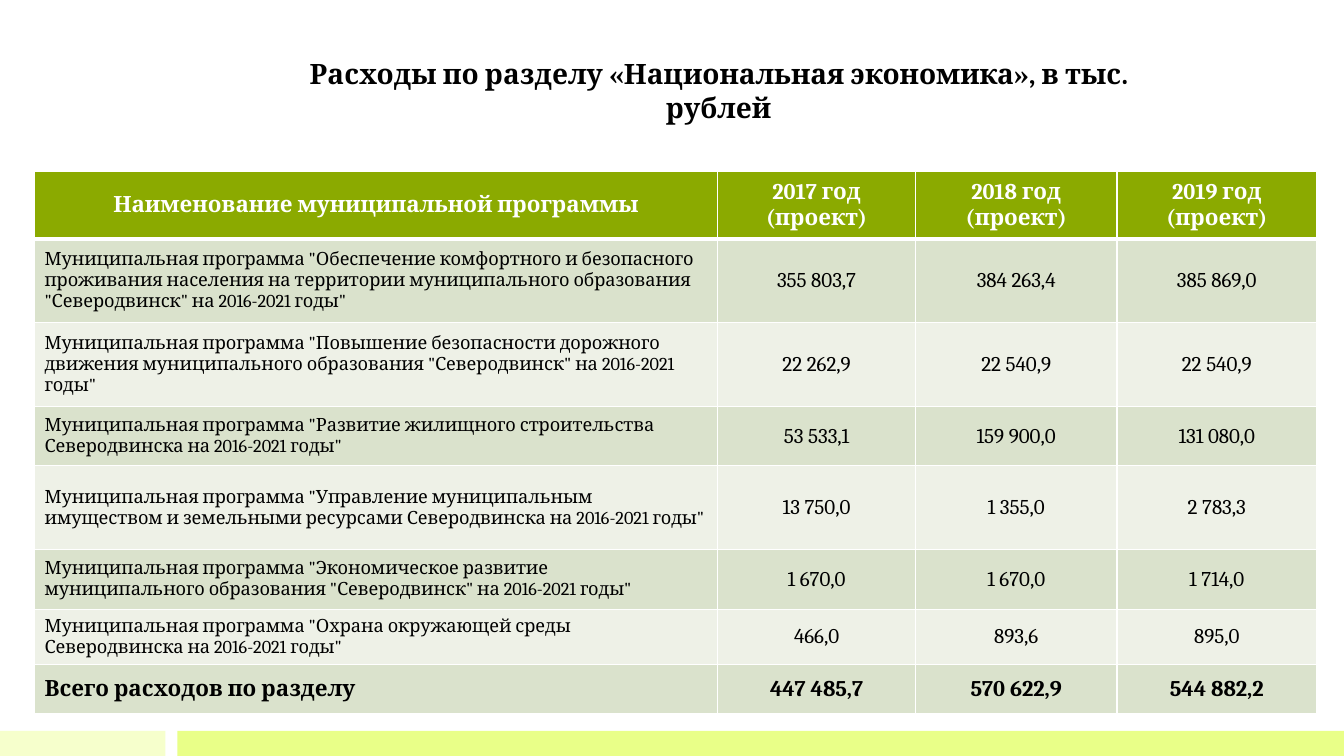
from lxml import etree
from pptx import Presentation
from pptx.dml.color import RGBColor
from pptx.enum.shapes import MSO_SHAPE
from pptx.enum.text import MSO_ANCHOR as ANCHOR, PP_ALIGN as ALIGN
from pptx.oxml.ns import qn
from pptx.util import Cm, Pt

WHITE = RGBColor(0xFF, 0xFF, 0xFF)
BLACK = RGBColor(0, 0, 0)
GREEN = RGBColor(0x8B, 0xAA, 0x00)
BAND_DARK = RGBColor(0xDA, 0xE2, 0xCC)
BAND_LIGHT = RGBColor(0xEE, 0xF1, 0xE7)
LIME = RGBColor(0xE9, 0xFF, 0x88)
PALE_LIME = RGBColor(0xF6, 0xFF, 0xCC)
FONT = "Cambria"
WIDTH, HEIGHT = 33.87, 19.05

TITLE = "Расходы по разделу «Национальная экономика», в тыс. рублей"
HEADER = ("Наименование муниципальной программы",
          "2017 год (проект)", "2018 год (проект)", "2019 год (проект)")
PROGRAMS = [
    ('Муниципальная программа "Обеспечение комфортного и безопасного проживания населения '
     'на территории муниципального образования "Северодвинск" на 2016-2021 годы"',
     "355 803,7", "384 263,4", "385 869,0"),
    ('Муниципальная программа "Повышение безопасности дорожного движения муниципального '
     'образования "Северодвинск" на 2016-2021 годы"',
     "22 262,9", "22 540,9", "22 540,9"),
    ('Муниципальная программа "Развитие жилищного строительства Северодвинска '
     'на 2016-2021 годы"',
     "53 533,1", "159 900,0", "131 080,0"),
    ('Муниципальная программа "Управление муниципальным имуществом и земельными ресурсами '
     'Северодвинска на 2016-2021 годы"',
     "13 750,0", "1 355,0", "2 783,3"),
    ('Муниципальная программа "Экономическое развитие муниципального образования '
     '"Северодвинск" на 2016-2021 годы"',
     "1 670,0", "1 670,0", "1 714,0"),
    ('Муниципальная программа "Охрана окружающей среды Северодвинска на 2016-2021 годы"',
     "466,0", "893,6", "895,0"),
]
TOTAL = ("Всего расходов по разделу", "447 485,7", "570 622,9", "544 882,2")
COL_WIDTHS = (17.22, 4.98, 5.08, 5.03)
ROW_HEIGHTS = (1.7, 2.11, 2.11, 1.5, 2.11, 1.5, 1.4, 1.22)


def write(tf, text, size, color, bold, align):
    tf.word_wrap = True
    p = tf.paragraphs[0]
    p.alignment = align
    r = p.add_run()
    r.text = text
    r.font.name = FONT
    r.font.size = Pt(size)
    r.font.bold = bold
    r.font.color.rgb = color


def set_borders(cell, bottom):
    """Draw white cell borders, 1 pt except for the bottom one."""
    tcPr = cell._tc.get_or_add_tcPr()
    for i, (side, width) in enumerate((("L", 1), ("R", 1), ("T", 1), ("B", bottom))):
        ln = etree.Element(qn(f"a:ln{side}"), w=str(Pt(width)))
        fill = etree.SubElement(ln, qn("a:solidFill"))
        etree.SubElement(fill, qn("a:srgbClr"), val=str(WHITE))
        tcPr.insert(i, ln)


def add_title(slide, left, top, width, height):
    s = slide.shapes.title
    s.left, s.top, s.width, s.height = Cm(left), Cm(top), Cm(width), Cm(height)
    s.text_frame.vertical_anchor = ANCHOR.MIDDLE
    write(s.text_frame, TITLE, 20, BLACK, True, ALIGN.CENTER)


def add_footer_bars(slide, left, top, width, height):
    short, gap = 4.17, 0.3
    long_left = left + short + gap
    for x, w, color in ((left, short, PALE_LIME),
                        (long_left, left + width - long_left, LIME)):
        s = slide.shapes.add_shape(MSO_SHAPE.RECTANGLE, Cm(x), Cm(top), Cm(w), Cm(height))
        s.shadow.inherit = False
        s.fill.solid()
        s.fill.fore_color.rgb = color
        s.line.fill.background()


def add_expense_table(slide, left, top):
    rows = [HEADER, *PROGRAMS, TOTAL]
    table = slide.shapes.add_table(
        len(rows), len(HEADER), Cm(left), Cm(top),
        Cm(sum(COL_WIDTHS)), Cm(sum(ROW_HEIGHTS))).table
    for column, width in zip(table.columns, COL_WIDTHS):
        column.width = Cm(width)
    for i, (values, height) in enumerate(zip(rows, ROW_HEIGHTS)):
        table.rows[i].height = Cm(height)
        is_header = i == 0
        strong = is_header or values is TOTAL
        band = GREEN if is_header else BAND_DARK if i % 2 else BAND_LIGHT
        for j, text in enumerate(values):
            cell = table.cell(i, j)
            cell.vertical_anchor = ANCHOR.MIDDLE
            cell.fill.solid()
            cell.fill.fore_color.rgb = band
            set_borders(cell, 3 if is_header else 1)
            size = 16 if strong else 15 if j else 13
            align = ALIGN.CENTER if is_header or j else ALIGN.LEFT
            write(cell.text_frame, text, size, WHITE if is_header else BLACK, strong, align)


def main():
    prs = Presentation()
    prs.slide_width, prs.slide_height = Cm(WIDTH), Cm(HEIGHT)
    slide = prs.slides.add_slide(prs.slide_layouts[5])
    add_footer_bars(slide, 0, 18.42, WIDTH, 0.63)
    add_title(slide, 6.91, 0.99, 22.4, 2.57)
    add_expense_table(slide, 0.87, 4.32)
    prs.save("out.pptx")


if __name__ == "__main__":
    main()
